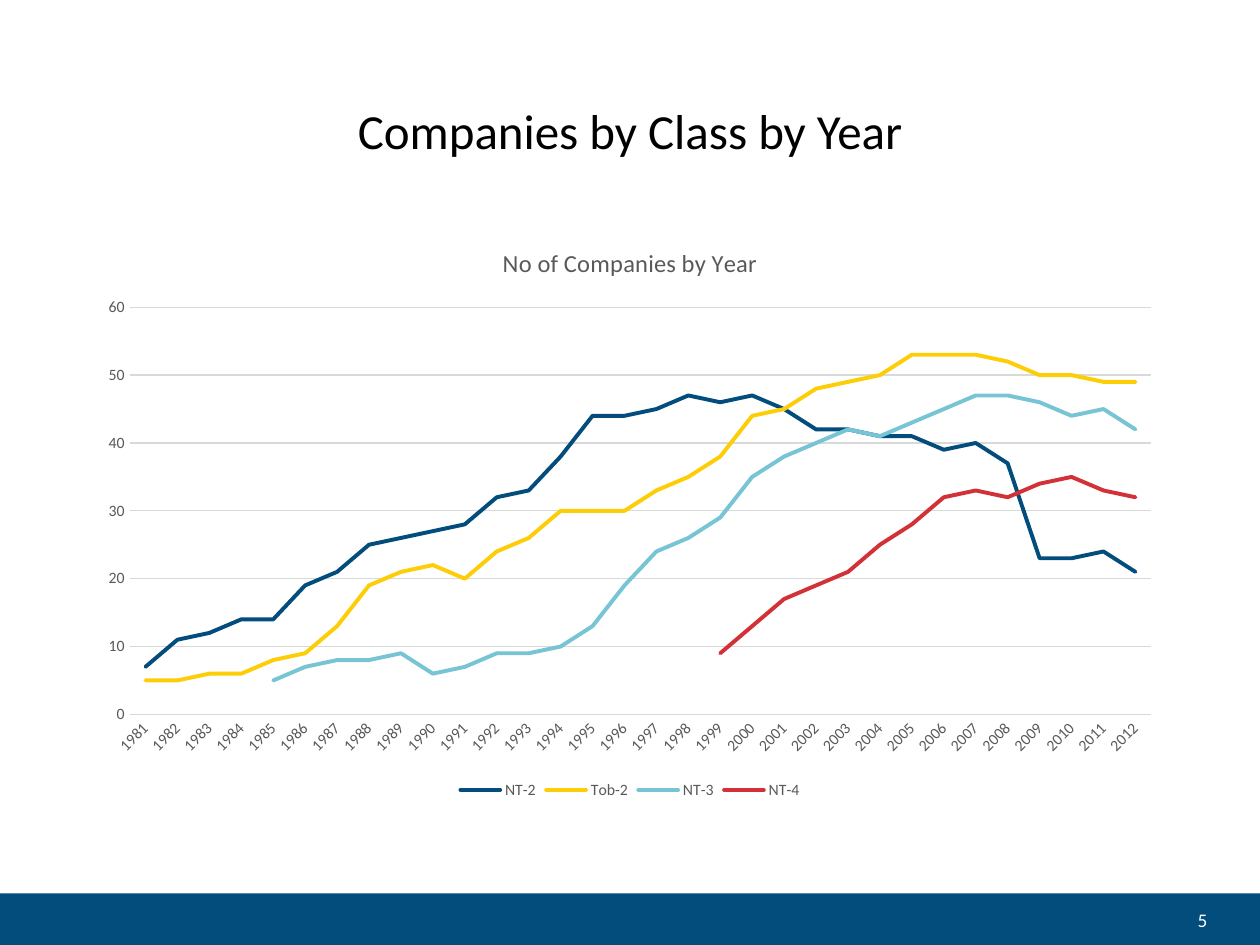
from dataclasses import dataclass
from typing import Any

from pptx import Presentation
from pptx.chart.data import CategoryChartData
from pptx.dml.color import RGBColor
from pptx.enum.chart import XL_CHART_TYPE as CT, XL_LEGEND_POSITION as LP, XL_TICK_MARK as TM
from pptx.enum.shapes import MSO_SHAPE as MS
from pptx.enum.text import MSO_ANCHOR as MA, MSO_AUTO_SIZE as AS, PP_ALIGN as PA
from pptx.util import Cm, Pt

COLORS = {
    "navy": "024D7C",
    "yellow": "FDCE07",
    "sky": "77C4D5",
    "red": "D23138",
    "black": "000000",
    "white": "FFFFFF",
    "gray": "595959",
    "grid": "D9D9D9",
}
YEARS = range(1981, 2013)


@dataclass(frozen=True)
class Box:
    left: float
    top: float
    width: float
    height: float

    def lengths(self) -> tuple:
        return Cm(self.left), Cm(self.top), Cm(self.width), Cm(self.height)


@dataclass(frozen=True)
class CompanyClass:
    name: str
    color: str
    counts: tuple[int, ...]

    def values(self) -> list:
        return [None] * (len(YEARS) - len(self.counts)) + list(self.counts)


CLASSES = [
    CompanyClass("NT-2", "navy", (
        7, 11, 12, 14, 14, 19, 21, 25, 26, 27, 28, 32, 33, 38, 44, 44,
        45, 47, 46, 47, 45, 42, 42, 41, 41, 39, 40, 37, 23, 23, 24, 21)),
    CompanyClass("Tob-2", "yellow", (
        5, 5, 6, 6, 8, 9, 13, 19, 21, 22, 20, 24, 26, 30, 30, 30,
        33, 35, 38, 44, 45, 48, 49, 50, 53, 53, 53, 52, 50, 50, 49, 49)),
    CompanyClass("NT-3", "sky", (
        5, 7, 8, 8, 9, 6, 7, 9, 9, 10, 13, 19, 24, 26,
        29, 35, 38, 40, 42, 41, 43, 45, 47, 47, 46, 44, 45, 42)),
    CompanyClass("NT-4", "red", (
        9, 13, 17, 19, 21, 25, 28, 32, 33, 32, 34, 35, 33, 32)),
]


def rgb(name: str) -> RGBColor:
    return RGBColor.from_string(COLORS[name])


def apply(obj: Any, formats: dict) -> None:
    for key, value in formats.items():
        setattr(obj, key, value)


def style_font(font: Any, size: float, color: str) -> None:
    apply(font, {"name": "Calibri", "size": Pt(size), "bold": False})
    font.color.rgb = rgb(color)


def style_line(line: Any, width: float, color: str) -> None:
    line.width = Pt(width)
    line.color.rgb = rgb(color)


def place(sp: Any, box: Box) -> None:
    apply(sp, dict(zip(("left", "top", "width", "height"), box.lengths())))


def write(sp: Any, text: str, size: float, color: str, align: PA, spacing: float = 1.0) -> None:
    tf = sp.text_frame
    apply(tf, {"word_wrap": True, "auto_size": AS.NONE, "vertical_anchor": MA.MIDDLE})
    p = tf.paragraphs[0]
    apply(p, {"alignment": align, "line_spacing": spacing})
    r = p.add_run()
    r.text = text
    style_font(r.font, size, color)


def add_footer(s: Any, box: Box) -> None:
    sp = s.shapes.add_shape(MS.RECTANGLE, *box.lengths())
    sp.shadow.inherit = False
    sp.fill.solid()
    sp.fill.fore_color.rgb = rgb("navy")
    sp.line.fill.background()


def style_axes(chart: Any) -> None:
    cat, val = chart.category_axis, chart.value_axis
    for axis in (cat, val):
        apply(axis, {"major_tick_mark": TM.NONE, "minor_tick_mark": TM.NONE})
        style_font(axis.tick_labels.font, 9, "gray")
    style_line(cat.format.line, 0.75, "grid")
    for body in cat._element.xpath("c:txPr/a:bodyPr"):
        body.set("rot", "-2700000")
    apply(val, {"minimum_scale": 0, "maximum_scale": 60, "major_unit": 10,
                "has_major_gridlines": True})
    val.format.line.fill.background()
    style_line(val.major_gridlines.format.line, 0.75, "grid")


def add_company_chart(s: Any, box: Box) -> None:
    data = CategoryChartData()
    data.categories = [str(year) for year in YEARS]
    for item in CLASSES:
        data.add_series(item.name, item.values())
    chart = s.shapes.add_chart(CT.LINE, *box.lengths(), data).chart
    style_font(chart.font, 10, "black")
    apply(chart, {"has_title": True, "has_legend": True})

    p = chart.chart_title.text_frame.paragraphs[0]
    r = p.add_run()
    r.text = "No of Companies by Year"
    style_font(r.font, 14, "gray")
    chart.chart_title.include_in_layout = False

    apply(chart.legend, {"position": LP.BOTTOM, "include_in_layout": False})
    style_font(chart.legend.font, 9, "gray")
    style_axes(chart)

    chart.plots[0].vary_by_categories = False
    for series, item in zip(chart.plots[0].series, CLASSES):
        series.smooth = False
        style_line(series.format.line, 2.25, item.color)
        for ln in series._element.xpath("c:spPr/a:ln"):
            ln.set("cap", "rnd")


def main() -> None:
    prs = Presentation()
    apply(prs, {"slide_width": Cm(25.4), "slide_height": Cm(19.05)})
    s = prs.slides.add_slide(prs.slide_layouts[5])

    add_footer(s, Box(0, 18.01, 25.4, 1.04))
    title = s.shapes.title
    place(title, Box(1.75, 0.91, 21.9, 3.56))
    write(title, "Companies by Class by Year", 28, "black", PA.CENTER, 0.9)
    add_company_chart(s, Box(1.75, 4.5, 21.9, 11.71))
    number = s.shapes.add_textbox(*Box(22.89, 18.03, 1.7, 1.02).lengths())
    write(number, "5", 11, "white", PA.RIGHT)

    prs.save("out.pptx")


if __name__ == "__main__":
    main()
